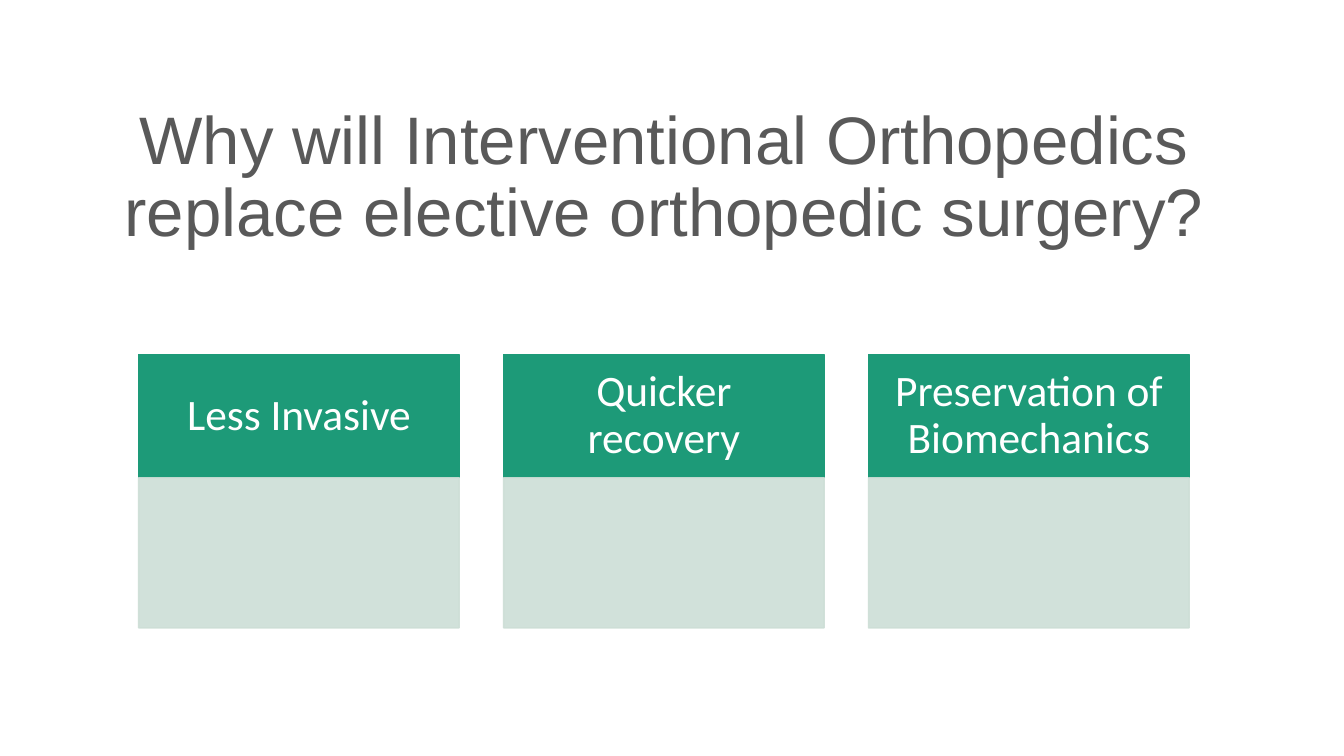
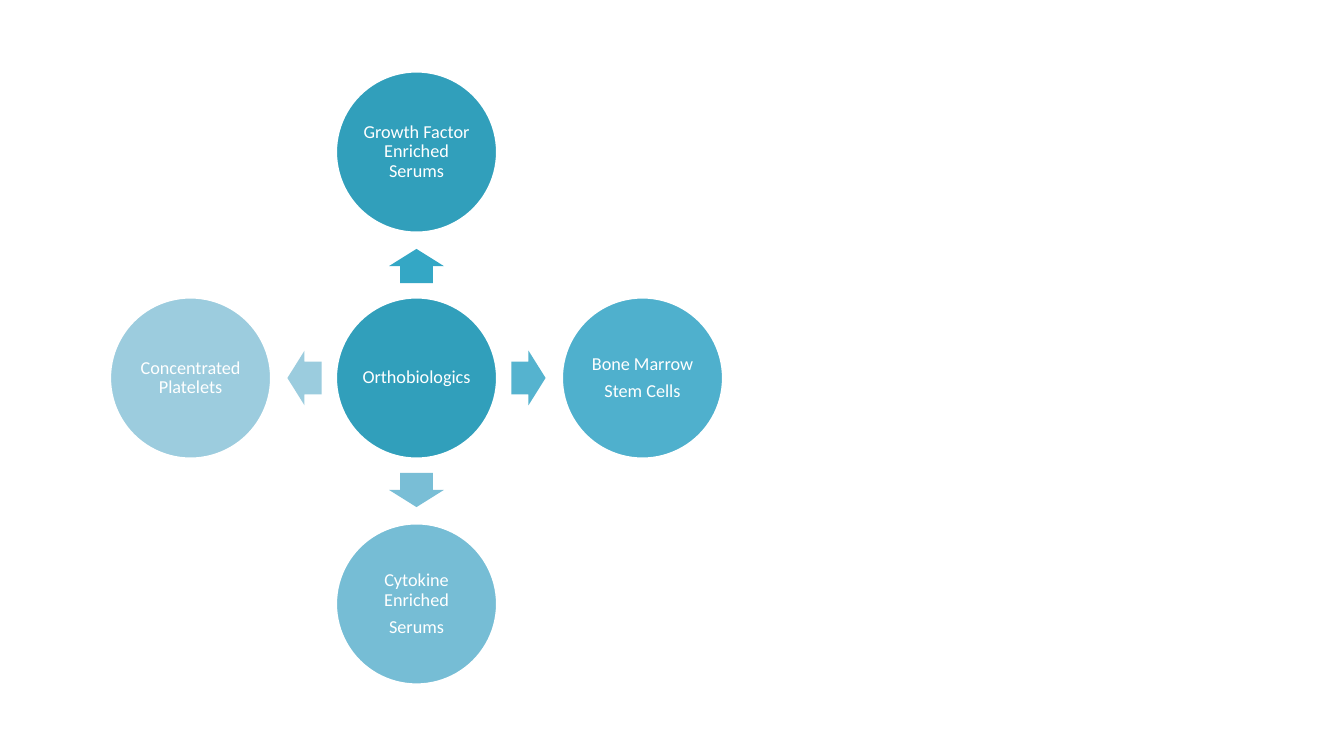
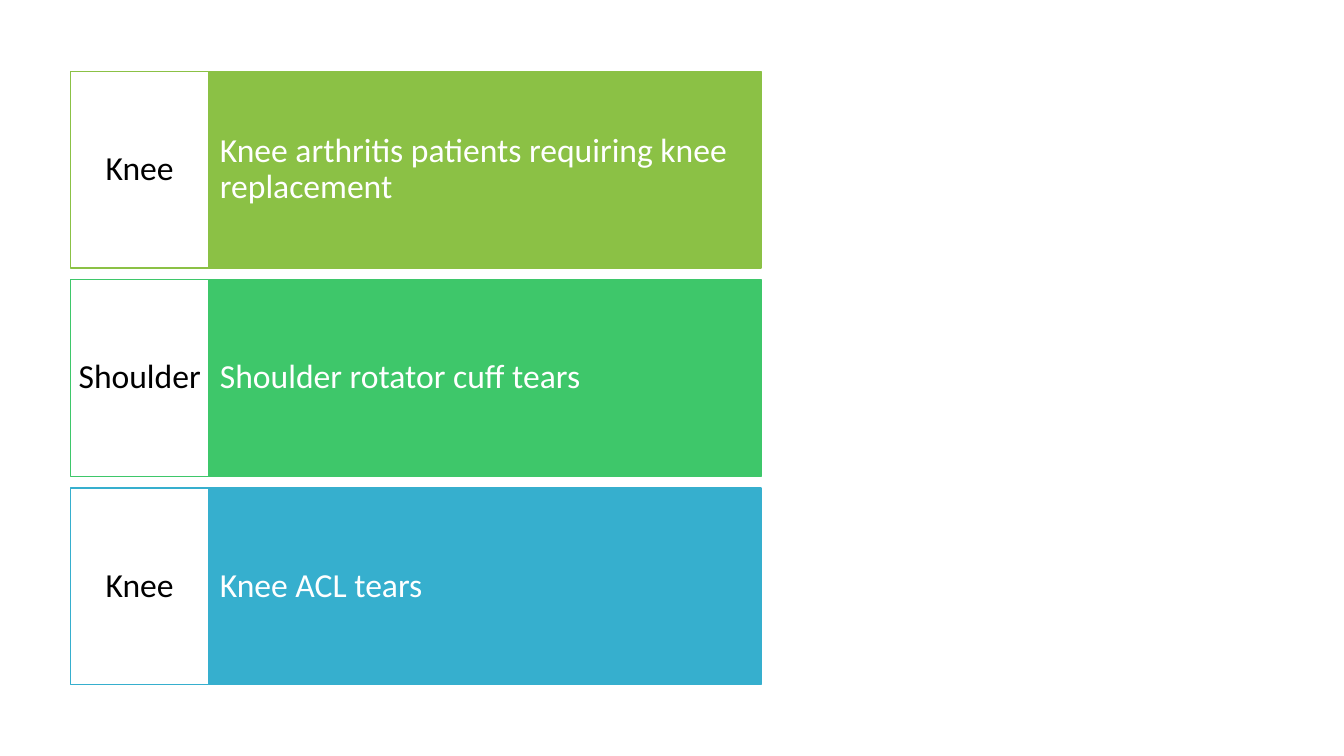
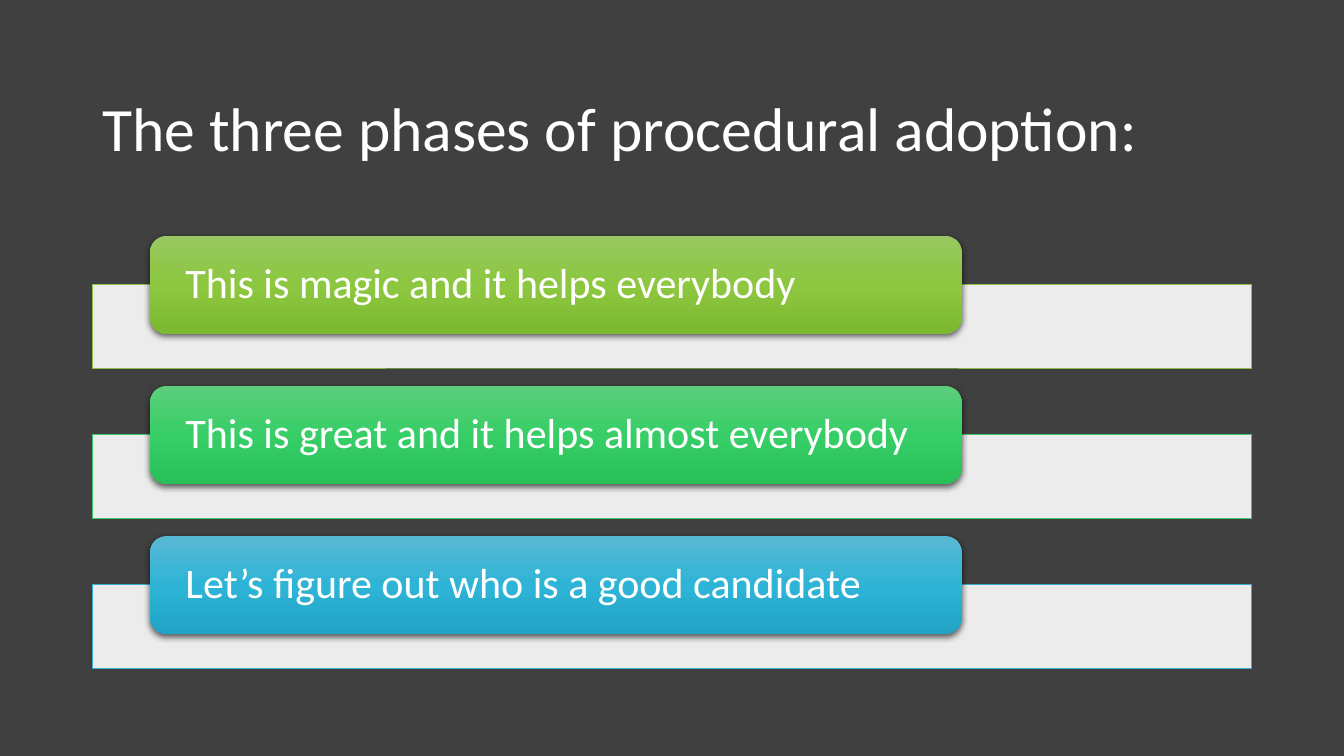
import copy
import math
from dataclasses import dataclass
from typing import Optional

import lxml.etree
import pptx
import pptx.dml.color
import pptx.enum.shapes
import pptx.enum.text
import pptx.oxml.ns
import pptx.shapes.autoshape
import pptx.slide
import pptx.util

Pt = pptx.util.Pt
Shapes = pptx.enum.shapes.MSO_SHAPE
Align = pptx.enum.text.PP_ALIGN
qn = pptx.oxml.ns.qn


@dataclass(frozen=True)
class Theme:
    white: str = "FFFFFF"
    black: str = "000000"
    dark: str = "404040"
    heading: str = "595959"
    teal: str = "1D9A78"
    pale_teal: str = "CDDED6"
    green: str = "8BC145"
    emerald: str = "3EC76A"
    blue: str = "36AFCE"
    hub: str = "319FBB"
    heading_font: str = "Arial"
    body_font: str = "Calibri"
    question_size: float = 48
    title_size: float = 44
    reason_size: float = 31
    phase_size: float = 30
    joint_size: float = 24
    circle_size: float = 13
    line_spacing: float = 0.9


THEME = Theme()


@dataclass(frozen=True)
class Box:
    left: float
    top: float
    width: float
    height: float


@dataclass(frozen=True)
class Look:
    fill: str
    line: Optional[str] = None
    line_width: float = 1
    fill_opacity: int = 100
    line_opacity: int = 100


@dataclass(frozen=True)
class Type:
    size: float
    color: str = THEME.white
    font: str = THEME.body_font
    align: Align = Align.CENTER
    inset_x: float = 7.2
    inset_y: float = 3.6
    space_after: float = 0


@dataclass(frozen=True)
class Spoke:
    angle: int
    lines: tuple[str, ...]
    arrow: str
    circle: str


@dataclass(frozen=True)
class Joint:
    name: str
    condition: str
    color: str


@dataclass(frozen=True)
class Phase:
    text: str
    border: str
    shades: tuple[str, str, str]


REASONS = ("Less Invasive", "Quicker recovery", "Preservation of Biomechanics")

SPOKES = (
    Spoke(270, ("Growth Factor Enriched Serums",), "34A7C5", THEME.hub),
    Spoke(0, ("Bone Marrow", "Stem Cells"), "55B3CF", "4FB0CD"),
    Spoke(90, ("Cytokine Enriched", "Serums"), "79BED6", "76BDD5"),
    Spoke(180, ("Concentrated Platelets",), "9BCCDE", "9CCCDE"),
)

JOINTS = (
    Joint("Knee", "Knee arthritis patients requiring knee replacement", THEME.green),
    Joint("Shoulder", "Shoulder rotator cuff tears", THEME.emerald),
    Joint("Knee", "Knee ACL tears", THEME.blue),
)

PHASES = (
    Phase("This is magic and it helps everybody", THEME.green,
          ("98C862", "8CC73F", "7DB831")),
    Phase("This is great and it helps almost everybody", THEME.emerald,
          ("5DCE7C", "37CE67", "29BF59")),
    Phase("Let’s figure out who is a good candidate", THEME.blue,
          ("59B8D4", "2EB4D6", "21A4C6")),
)


def rgb(color: str) -> pptx.dml.color.RGBColor:
    return pptx.dml.color.RGBColor.from_string(color)


def set_opacity(parent: lxml.etree._Element, percent: int) -> None:
    if percent < 100:
        color = next(parent.iter(qn("a:srgbClr")))
        lxml.etree.SubElement(color, qn("a:alpha"), val=str(percent * 1000))


def write(frame: pptx.text.text.TextFrame, lines: tuple[str, ...], style: Type) -> None:
    frame.word_wrap = True
    frame.auto_size = pptx.enum.text.MSO_AUTO_SIZE.NONE
    frame.vertical_anchor = pptx.enum.text.MSO_ANCHOR.MIDDLE
    frame.margin_left = frame.margin_right = Pt(style.inset_x)
    frame.margin_top = frame.margin_bottom = Pt(style.inset_y)
    frame.text = "\n".join(lines)
    for paragraph in frame.paragraphs:
        paragraph.alignment = style.align
        paragraph.line_spacing = THEME.line_spacing
        paragraph.space_after = Pt(style.space_after)
        paragraph.font.size = Pt(style.size)
        paragraph.font.name = style.font
        paragraph.font.color.rgb = rgb(style.color)


def add_title(slide: pptx.slide.Slide, text: str, box: Box, style: Type) -> None:
    title = slide.shapes.title
    title.left, title.top = Pt(box.left), Pt(box.top)
    title.width, title.height = Pt(box.width), Pt(box.height)
    write(title.text_frame, (text,), style)


def draw(slide: pptx.slide.Slide, kind: Shapes, box: Box,
         look: Look) -> pptx.shapes.autoshape.Shape:
    shape = slide.shapes.add_shape(
        kind, Pt(box.left), Pt(box.top), Pt(box.width), Pt(box.height))
    shape.shadow.inherit = False
    shape.fill.solid()
    shape.fill.fore_color.rgb = rgb(look.fill)
    set_opacity(shape._element.spPr, look.fill_opacity)
    if look.line:
        shape.line.color.rgb = rgb(look.line)
        shape.line.width = Pt(look.line_width)
        set_opacity(shape._element.spPr.find(qn("a:ln")), look.line_opacity)
    else:
        shape.line.fill.background()
    return shape


def shade(shape: pptx.shapes.autoshape.Shape, shades: tuple[str, str, str]) -> None:
    shape.fill.gradient()
    shape.fill.gradient_angle = 270
    first = next(shape._element.spPr.iter(qn("a:gs")))
    first.addnext(copy.deepcopy(first))
    for index, stop in enumerate(shape.fill.gradient_stops):
        stop.position = index / 2
        stop.color.rgb = rgb(shades[index])


def cast_shadow(shape: pptx.shapes.autoshape.Shape) -> None:
    effects = shape._element.spPr.find(qn("a:effectLst"))
    shadow = lxml.etree.SubElement(
        effects, qn("a:outerShdw"), blurRad=str(Pt(4.5)), dist=str(Pt(1.5)),
        dir="5400000", algn="ctr", rotWithShape="0")
    lxml.etree.SubElement(shadow, qn("a:srgbClr"), val=THEME.black)
    set_opacity(shadow, 63)


def centred(x: float, y: float, width: float, height: float) -> Box:
    return Box(x - width / 2, y - height / 2, width, height)


def build_reasons(slide: pptx.slide.Slide) -> None:
    add_title(slide, "Why will Interventional Orthopedics replace elective orthopedic surgery?",
              Box(47.5, 75.5, 854, 104.4),
              Type(THEME.question_size, THEME.heading, THEME.heading_font))
    left, top, pitch, width = 99, 253.4, 260.7, 229
    header_height, panel_height = 87.8, 107.3
    for index, reason in enumerate(REASONS):
        x = left + index * pitch
        header = draw(slide, Shapes.RECTANGLE, Box(x, top, width, header_height),
                      Look(THEME.teal, THEME.teal))
        write(header.text_frame, (reason,),
              Type(THEME.reason_size, inset_x=17.3, inset_y=10))
        draw(slide, Shapes.RECTANGLE, Box(x, top + header_height, width, panel_height),
             Look(THEME.pale_teal, THEME.pale_teal, fill_opacity=90, line_opacity=90))


def build_orthobiologics(slide: pptx.slide.Slide) -> None:
    centre_x, centre_y, diameter = 297.5, 270, 115
    circle_distance, arrow_distance = 161.4, 80
    label = Type(THEME.circle_size, inset_x=1.2, inset_y=1.2, space_after=5)

    def add_circle(x: float, y: float, lines: tuple[str, ...], color: str) -> None:
        circle = draw(slide, Shapes.OVAL, centred(x, y, diameter, diameter),
                      Look(color, THEME.white, 1.5))
        write(circle.text_frame, lines, label)

    add_circle(centre_x, centre_y, ("Orthobiologics",), THEME.hub)
    for spoke in SPOKES:
        dx = math.cos(math.radians(spoke.angle))
        dy = math.sin(math.radians(spoke.angle))
        arrow = draw(slide, Shapes.RIGHT_ARROW,
                     centred(centre_x + dx * arrow_distance,
                             centre_y + dy * arrow_distance, 24.4, 39),
                     Look(spoke.arrow))
        arrow.adjustments[0], arrow.adjustments[1] = 0.6, 0.5
        arrow.rotation = spoke.angle
        add_circle(centre_x + dx * circle_distance, centre_y + dy * circle_distance,
                   spoke.lines, spoke.circle)


def build_joints(slide: pptx.slide.Slide) -> None:
    left, top, pitch, height = 50.5, 51, 148.8, 140.4
    name_width, condition_width = 98.6, 394.6
    for index, joint in enumerate(JOINTS):
        y = top + index * pitch
        condition = draw(slide, Shapes.RECTANGLE,
                         Box(left + name_width, y, condition_width, height),
                         Look(joint.color, joint.color))
        write(condition.text_frame, (joint.condition,),
              Type(THEME.joint_size, align=Align.LEFT, inset_x=8, inset_y=36))
        name = draw(slide, Shapes.RECTANGLE, Box(left, y, name_width, height),
                    Look(THEME.white, joint.color))
        write(name.text_frame, (joint.name,),
              Type(THEME.joint_size, THEME.black, inset_x=5, inset_y=13.7))


def build_phases(slide: pptx.slide.Slide) -> None:
    slide.background.fill.solid()
    slide.background.fill.fore_color.rgb = rgb(THEME.dark)
    add_title(slide, "The three phases of procedural adoption:",
              Box(66, 41.8, 828, 104.4), Type(THEME.title_size, align=Align.LEFT))
    top, pitch, bar_drop = 168.5, 107.2, 34.6
    for index, phase in enumerate(PHASES):
        y = top + index * pitch
        draw(slide, Shapes.RECTANGLE, Box(66, y + bar_drop, 828, 59.8),
             Look(THEME.white, phase.border, 0.5, fill_opacity=90))
        banner = draw(slide, Shapes.ROUNDED_RECTANGLE, Box(107.3, y, 579.6, 69.8),
                      Look(phase.shades[1]))
        shade(banner, phase.shades)
        cast_shadow(banner)
        write(banner.text_frame, (phase.text,),
              Type(THEME.phase_size, align=Align.LEFT, inset_x=21.8, inset_y=0))


def main() -> None:
    deck = pptx.Presentation()
    deck.slide_width, deck.slide_height = Pt(960), Pt(540)
    title_only, blank = deck.slide_layouts[5], deck.slide_layouts[6]
    for layout, build in ((title_only, build_reasons), (blank, build_orthobiologics),
                          (blank, build_joints), (title_only, build_phases)):
        build(deck.slides.add_slide(layout))
    deck.save("out.pptx")


if __name__ == "__main__":
    main()
